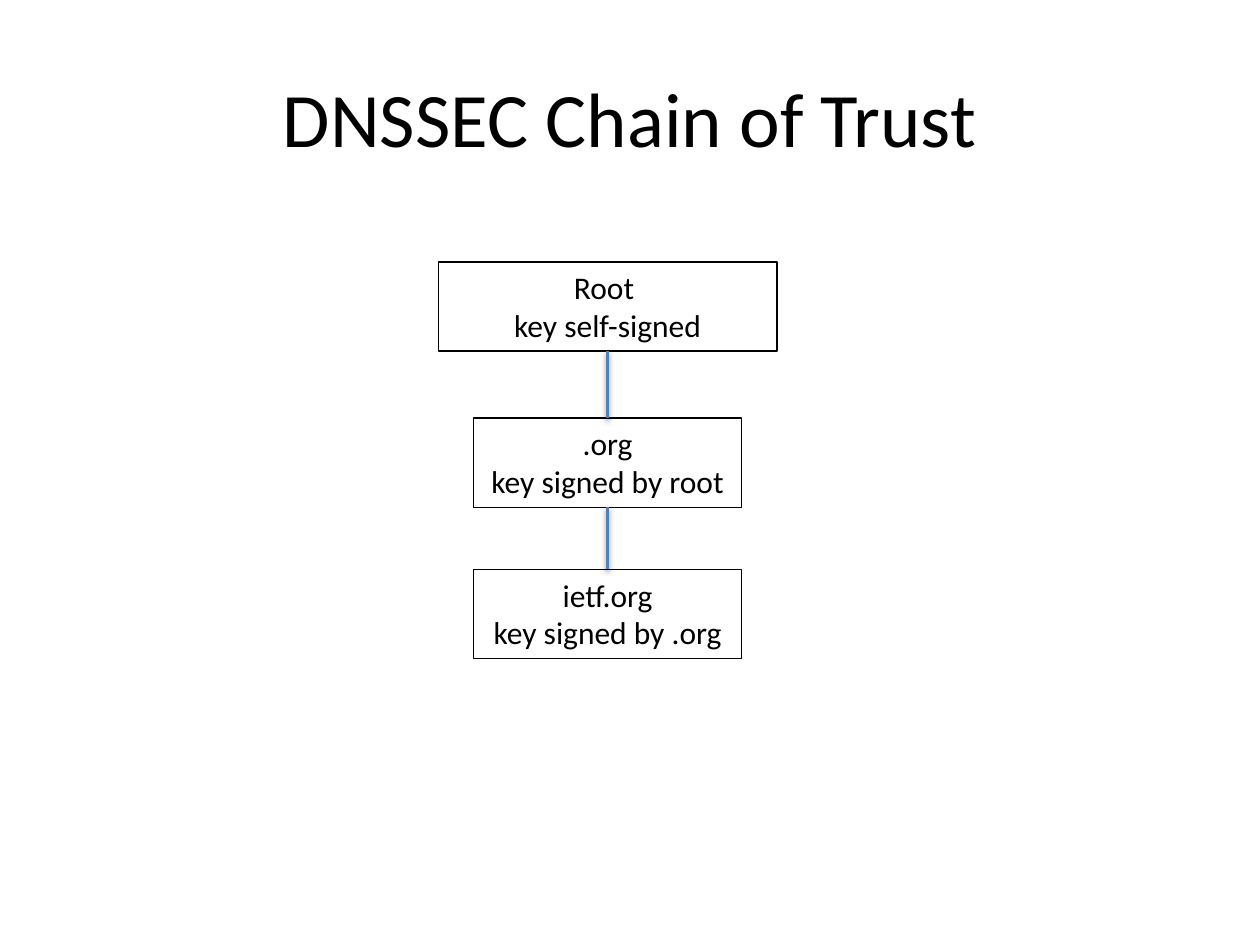
import dataclasses

import lxml.etree
import pptx
import pptx.dml.color
import pptx.enum.shapes
import pptx.enum.text
import pptx.oxml.ns
import pptx.shapes.autoshape
import pptx.shapes.connector
import pptx.slide
import pptx.text.text
import pptx.util
from pptx.util import Cm

CENTER = 12.25
BOX_HEIGHT = 1.8
BOTTOM, TOP = 2, 0


@dataclasses.dataclass
class Zone:
    name: str
    key: str
    top: float
    width: float


ZONES = [
    Zone("Root ", "key self-signed", 5.28, 6.83),
    Zone(".org", "key signed by root", 8.43, 5.41),
    Zone("ietf.org", "key signed by .org", 11.48, 5.41),
]


def color(value: str) -> pptx.dml.color.RGBColor:
    return pptx.dml.color.RGBColor.from_string(value)


def write(para: pptx.text.text._Paragraph, text: str, *, size: float,
          fill: str = "000000", font: str = "Calibri") -> None:
    para.alignment = pptx.enum.text.PP_ALIGN.CENTER
    span = para.add_run()
    span.text = text
    span.font.size = pptx.util.Pt(size)
    span.font.name = font
    span.font.color.rgb = color(fill)


def add_zone(page: pptx.slide.Slide, zone: Zone) -> pptx.shapes.autoshape.Shape:
    box = page.shapes.add_textbox(Cm(CENTER - zone.width / 2), Cm(zone.top),
                                  Cm(zone.width), Cm(BOX_HEIGHT))
    box.line.color.rgb = color("000000")
    box.line.width = pptx.util.Pt(0.75)
    frame = box.text_frame
    frame.word_wrap = True
    frame.auto_size = pptx.enum.text.MSO_AUTO_SIZE.SHAPE_TO_FIT_TEXT
    write(frame.paragraphs[0], zone.name, size=18)
    write(frame.add_paragraph(), zone.key, size=18)
    return box


def add_shadow(line: pptx.shapes.connector.Connector) -> None:
    qn = pptx.oxml.ns.qn
    properties = line._element.spPr
    effects = lxml.etree.SubElement(properties, qn("a:effectLst"))
    shadow = lxml.etree.SubElement(effects, qn("a:outerShdw"), blurRad="40000",
                                   dist="20000", dir="5400000", rotWithShape="0")
    tint = lxml.etree.SubElement(shadow, qn("a:srgbClr"), val="000000")
    lxml.etree.SubElement(tint, qn("a:alpha"), val="38000")


def add_link(page: pptx.slide.Slide, parent: pptx.shapes.autoshape.Shape,
             child: pptx.shapes.autoshape.Shape) -> None:
    line = page.shapes.add_connector(pptx.enum.shapes.MSO_CONNECTOR.STRAIGHT, 0, 0, 0, 0)
    line.begin_connect(parent, BOTTOM)
    line.end_connect(child, TOP)
    line.line.color.rgb = color("4F81BD")
    line.line.width = pptx.util.Pt(2)
    add_shadow(line)


def main() -> None:
    deck = pptx.Presentation()
    deck.slide_width, deck.slide_height = Cm(25.4), Cm(19.05)
    page = deck.slides.add_slide(deck.slide_layouts.get_by_name("Title Only"))

    title = page.shapes.title
    title.left, title.top = Cm(1.27), Cm(0.76)
    title.width, title.height = Cm(22.86), Cm(3.18)
    title.text_frame.vertical_anchor = pptx.enum.text.MSO_ANCHOR.MIDDLE
    write(title.text_frame.paragraphs[0], "DNSSEC Chain of Trust", size=44)

    boxes = [add_zone(page, zone) for zone in ZONES]
    for parent, child in zip(boxes, boxes[1:]):
        add_link(page, parent, child)

    deck.save("out.pptx")


if __name__ == "__main__":
    main()
